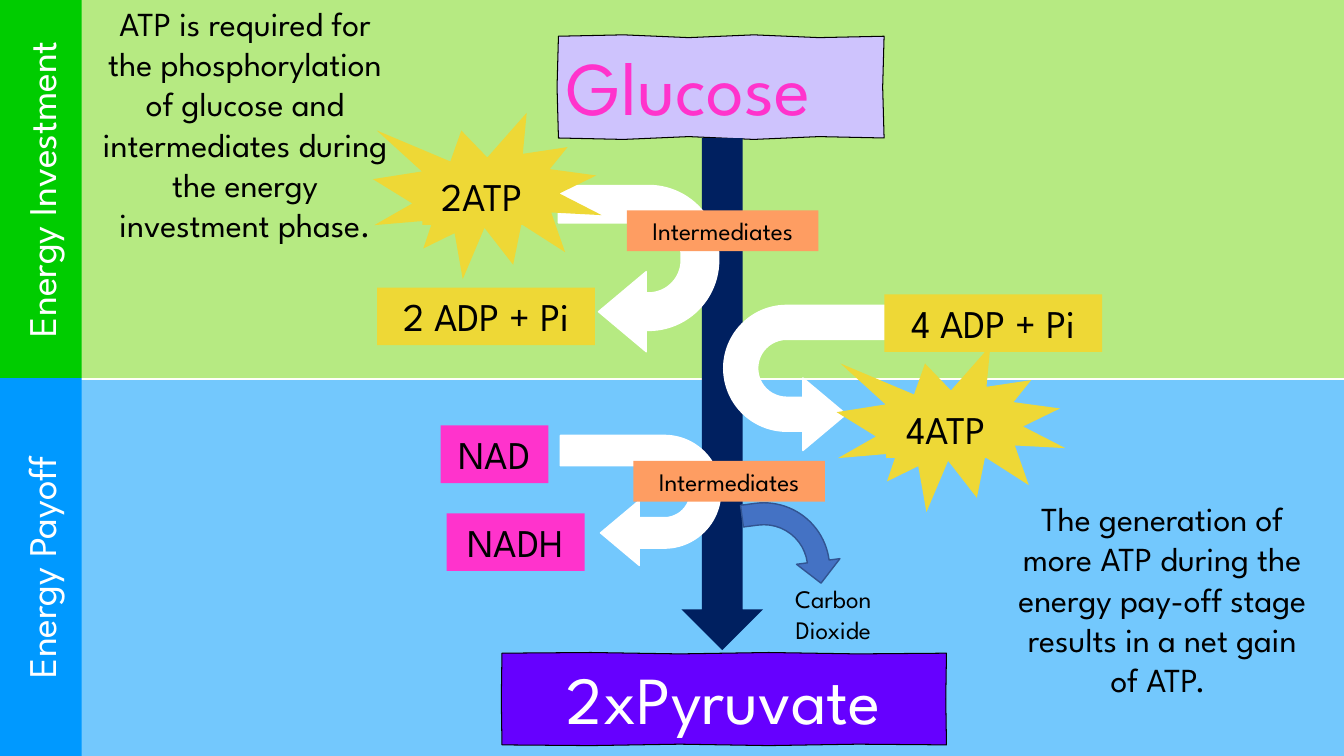
"""Build a slide on the energy investment and payoff phases of glycolysis."""
from pptx import Presentation
from pptx.dml.color import RGBColor
from pptx.enum.shapes import MSO_SHAPE
from pptx.enum.text import MSO_ANCHOR, MSO_AUTO_SIZE, PP_ALIGN
from pptx.util import Pt

COLOURS = {
    "paper": "FFFFF8", "white": "FFFFFF", "black": "000000",
    "lime": "B6EA82", "sky": "73C8FD", "green": "00CC00", "azure": "0099FF",
    "lilac": "CEC3FD", "violet": "6600FF", "pink": "FF33CC", "navy": "002060",
    "yellow": "EED836", "orange": "FE9D62", "blue": "4472C4", "steel": "325491",
}
FONT = "League Spartan"


def paint(block, fill, line=None, weight=1):
    block.shadow.inherit = False
    block.fill.solid()
    block.fill.fore_color.rgb = RGBColor.from_string(COLOURS[fill])
    if line:
        block.line.color.rgb = RGBColor.from_string(COLOURS[line])
        block.line.width = Pt(weight)
    else:
        block.line.fill.background()
    return block


def write(box, text, size, colour="black", align=PP_ALIGN.CENTER):
    frame = box.text_frame
    frame.word_wrap = True
    frame.auto_size = MSO_AUTO_SIZE.SHAPE_TO_FIT_TEXT
    frame.vertical_anchor = MSO_ANCHOR.TOP
    para = frame.paragraphs[0]
    para.alignment = align
    span = para.add_run()
    span.text = text
    span.font.name = FONT
    span.font.size = Pt(size)
    span.font.color.rgb = RGBColor.from_string(COLOURS[colour])


deck = Presentation()
deck.slide_width, deck.slide_height = Pt(960), Pt(540)
page = deck.slides.add_slide(deck.slide_layouts[6])
page.background.fill.solid()
page.background.fill.fore_color.rgb = RGBColor.from_string(COLOURS["paper"])

backdrops = [
    ((0, 0, 960, 270), "lime"),
    ((13.7, 271.5, 960, 270), "sky"),
    ((0, 0, 58.3, 270), "green"),
    ((0, 270, 58.3, 270), "azure"),
]
for frame, fill in backdrops:
    paint(page.shapes.add_shape(MSO_SHAPE.RECTANGLE, *[Pt(length) for length in frame]), fill)

phases = [
    ("Energy Investment", (-105.8, 114.5, 270, 41.2)),
    ("Energy Payoff", (-73.4, 384.5, 205.2, 41.2)),
]
for name, frame in phases:
    label = page.shapes.add_textbox(*[Pt(length) for length in frame])
    label.rotation = 270
    write(label, name, 28, "white")

molecules = [
    ("Glucose", (398.9, 25.9, 232.6, 72.7), 1, "lilac", 54, "pink", PP_ALIGN.LEFT),
    ("2xPyruvate", (358.6, 466.6, 317.5, 65.5), 0.5, "violet", 48, "white", PP_ALIGN.CENTER),
]
for name, (left, top, width, height), swing, fill, size, colour, align in molecules:
    right, bottom = left + width, top + height
    corners = [(left, top), (right, top), (right, bottom), (left, bottom)]
    outline = []
    for (x0, y0), (x1, y1) in zip(corners, corners[1:] + corners[:1]):
        pieces = 5 if y0 == y1 else 2
        for step in range(pieces):
            offset = swing * (-1) ** step if step else 0
            x = x0 + (x1 - x0) * step / pieces + (offset if x0 == x1 else 0)
            y = y0 + (y1 - y0) * step / pieces + (offset if y0 == y1 else 0)
            outline.append((Pt(x), Pt(y)))
    builder = page.shapes.build_freeform(*outline[0])
    builder.add_line_segments(outline[1:], close=True)
    molecule = paint(builder.convert_to_shape(), fill, "black", 0.75)
    write(molecule, name, size, colour, align)

pathway = page.shapes.add_shape(MSO_SHAPE.DOWN_ARROW, Pt(486.7), Pt(98.6), Pt(58.3), Pt(365.8))
paint(pathway, "navy")

turns = [
    ((396.7, 134.6, 118.8, 114.5), False),
    ((523.4, 211.7, 103.7, 116.6), True),
    ((411.1, 300.2, 92.9, 114.5), False),
]
for frame, mirrored in turns:
    turn = page.shapes.add_shape(MSO_SHAPE.U_TURN_ARROW, *[Pt(length) for length in frame])
    paint(turn, "white", "white").rotation = 90
    for index, value in enumerate((0.234, 0.25, 0.298, 0.438, 0.75)):
        turn.adjustments[index] = value
    if mirrored:
        turn.element.spPr.xfrm.set("flipV", "1")

labels = [
    ("2 ADP + Pi", (269.5, 205.4, 155.5, 41.2), "yellow", 28),
    ("4 ADP + Pi", (631.7, 210.2, 155.5, 41.2), "yellow", 28),
    ("NAD", (314.8, 303.9, 77, 41.2), "pink", 28),
    ("NADH", (319, 366.7, 98.6, 41.2), "pink", 28),
    ("Intermediates", (447.8, 150.2, 136.8, 29.1), "orange", 18),
    ("Intermediates", (452.4, 329.2, 136.8, 29.1), "orange", 18),
]
for left, top, name in ((266.4, 80.6, "2ATP"), (597.6, 247, "4ATP")):
    burst = page.shapes.add_shape(MSO_SHAPE.EXPLOSION1, Pt(left), Pt(top), Pt(163.4), Pt(118.8))
    paint(burst, "yellow")
    labels.append((name, (left + 35.3, top + 38.9, 85.7, 41.2), "yellow", 28))
for name, frame, fill, size in labels:
    label = page.shapes.add_shape(MSO_SHAPE.RECTANGLE, *[Pt(length) for length in frame])
    write(paint(label, fill), name, size)

release = page.shapes.add_shape(MSO_SHAPE.BENT_ARROW, Pt(534.2), Pt(355), Pt(62.6), Pt(65.5))
paint(release, "blue", "steel").rotation = 82.6
for index, value in enumerate((0.25, 0.25, 0.25, 0.875)):
    release.adjustments[index] = value

notes = [
    ("ATP is required for the phosphorylation of glucose and intermediates "
     "during the energy investment phase.", (60.2, -1.6, 229.7, 211), 24),
    ("The generation of more ATP during the energy pay-off stage "
     "results in a net gain of ATP. ", (718.6, 352.1, 223.2, 181.4), 24),
    ("Carbon Dioxide", (533.3, 413.3, 123.8, 51.1), 18),
]
for text, frame, size in notes:
    write(page.shapes.add_textbox(*[Pt(length) for length in frame]), text, size)

deck.save("out.pptx")
